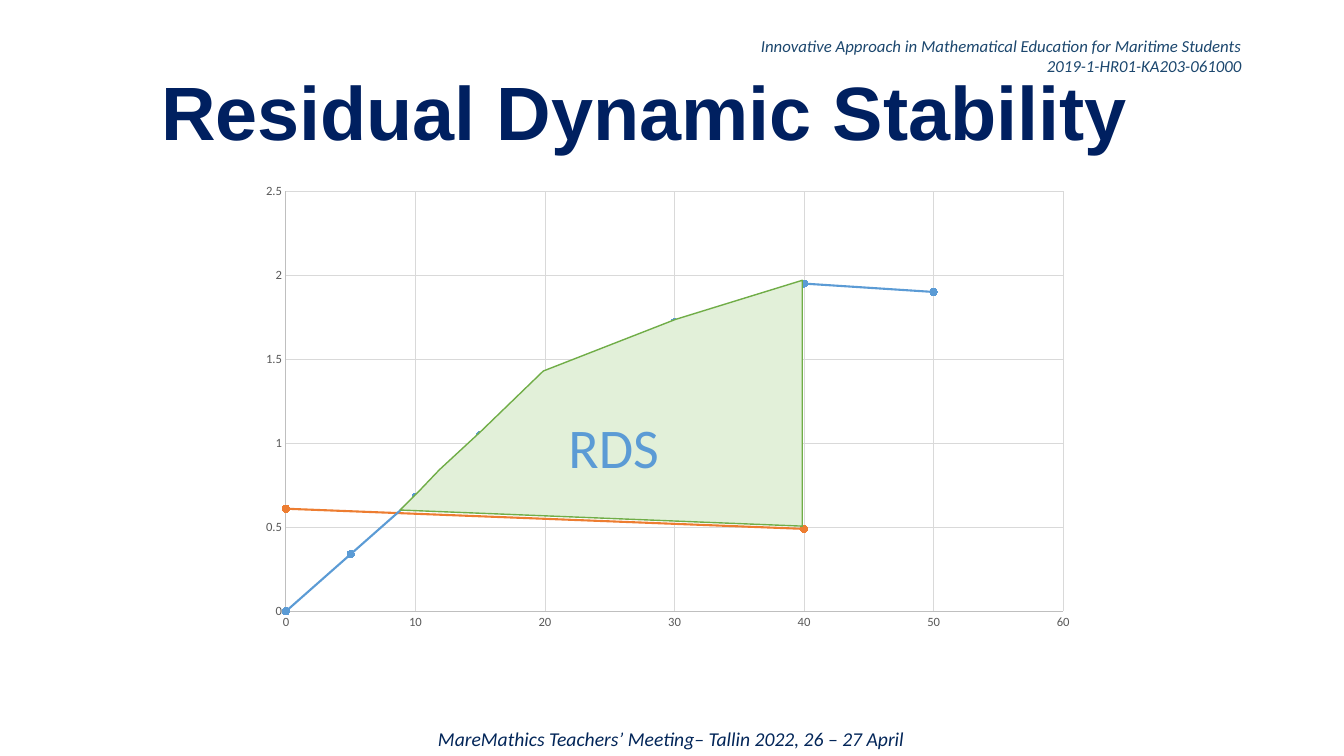
from lxml import etree
from pptx import Presentation
from pptx.chart.data import XyChartData
from pptx.dml.color import RGBColor
from pptx.enum.chart import XL_CHART_TYPE, XL_MARKER_STYLE, XL_TICK_MARK
from pptx.enum.text import MSO_ANCHOR, PP_ALIGN
from pptx.oxml import parse_xml
from pptx.oxml.ns import nsdecls, qn
from pptx.util import Pt

SCATTER = XL_CHART_TYPE.XY_SCATTER_SMOOTH
CIRCLE = XL_MARKER_STYLE.CIRCLE
NO_TICK = XL_TICK_MARK.NONE
TOP, MIDDLE = MSO_ANCHOR.TOP, MSO_ANCHOR.MIDDLE
LEFT, CENTER, RIGHT = PP_ALIGN.LEFT, PP_ALIGN.CENTER, PP_ALIGN.RIGHT

HEADER_BLUE = RGBColor(0x1C, 0x47, 0x6E)
FOOTER_BLUE = RGBColor(0x03, 0x26, 0x59)
TITLE_NAVY = RGBColor(0x00, 0x20, 0x60)
BLUE = RGBColor(0x5B, 0x9B, 0xD5)
ORANGE = RGBColor(0xED, 0x7D, 0x31)
GREEN = RGBColor(0x70, 0xAD, 0x47)
PALE_GREEN = RGBColor(0xE2, 0xF0, 0xD9)
BLACK = RGBColor(0x00, 0x00, 0x00)
LABEL_GREY = RGBColor(0x59, 0x59, 0x59)
AXIS_GREY = RGBColor(0xBF, 0xBF, 0xBF)
GRID_GREY = RGBColor(0xD9, 0xD9, 0xD9)

SERIES = [
    ("Series 1", BLUE, [(0, 0), (5, 0.34), (10, 0.68), (12, 0.82), (15, 1.05),
                        (20, 1.4), (30, 1.72), (40, 1.95), (50, 1.9)]),
    ("Series 2", ORANGE, [(0, 0.61), (40, 0.49)]),
]
RDS_OUTLINE = [(285.8, 364.3), (298.1, 352.1), (313.9, 335.5), (342.7, 308.9),
               (388.1, 265), (482.4, 228.2), (573.1, 200.2), (573.1, 375.8)]
# Plot area as fractions of the chart frame
PLOT = {"x": 0.044, "y": 0.034, "w": 0.93, "h": 0.904}


def set_font(font, size, color, name="Calibri", bold=False, italic=False):
    font.size, font.name = Pt(size), name
    font.bold, font.italic = bold, italic
    font.color.rgb = color


def add_text(shapes, text, box, align=LEFT, anchor=TOP, spacing=None, **font):
    """Add a text box with one paragraph per line of text."""
    tf = shapes.add_textbox(*map(Pt, box)).text_frame
    tf.word_wrap = True
    tf.vertical_anchor = anchor
    for i, line in enumerate(text.split("\n")):
        p = tf.add_paragraph() if i else tf.paragraphs[0]
        p.alignment = align
        p.line_spacing = spacing
        r = p.add_run()
        r.text = line
        set_font(r.font, **font)


def set_line(line, color, width):
    line.color.rgb = color
    line.width = Pt(width)


def format_axis(axis, maximum, step):
    axis.minimum_scale, axis.maximum_scale = 0, maximum
    axis.major_unit = step
    axis.major_tick_mark = axis.minor_tick_mark = NO_TICK
    axis.has_major_gridlines = True
    set_line(axis.major_gridlines.format.line, GRID_GREY, 0.75)
    set_line(axis.format.line, AXIS_GREY, 0.75)
    set_font(axis.tick_labels.font, 9, LABEL_GREY)
    axis.tick_labels.number_format = "General"
    axis.tick_labels.number_format_is_linked = False


def fix_plot_area(chart):
    """Give the inner plot area a fixed place inside the chart frame."""
    plot_area = chart.element.find(".//" + qn("c:plotArea"))
    for old in plot_area.findall(qn("c:layout")):
        plot_area.remove(old)
    layout = parse_xml(f"<c:layout {nsdecls('c')}><c:manualLayout/></c:layout>")
    values = {"layoutTarget": "inner", "xMode": "edge", "yMode": "edge", **PLOT}
    for tag, value in values.items():
        etree.SubElement(layout[0], qn("c:" + tag)).set("val", str(value))
    plot_area.insert(0, layout)


def add_stability_chart(shapes, box):
    data = XyChartData()
    for name, _, points in SERIES:
        series = data.add_series(name)
        for x, y in points:
            series.add_data_point(x, y)
    chart = shapes.add_chart(SCATTER, *map(Pt, box), data).chart
    chart.has_title = chart.has_legend = False
    set_font(chart.font, 10, BLACK)
    format_axis(chart.category_axis, 60, 10)
    format_axis(chart.value_axis, 2.5, 0.5)
    chart.plots[0].vary_by_categories = False
    for series, (_, color, _) in zip(chart.plots[0].series, SERIES):
        series.smooth = True
        set_line(series.format.line, color, 1.5)
        marker = series.marker
        marker.style, marker.size = CIRCLE, 5
        marker.format.fill.solid()
        marker.format.fill.fore_color.rgb = color
        set_line(marker.format.line, color, 0.75)
    fix_plot_area(chart)


def add_area(shapes, points, fill, line):
    start, *rest = [(Pt(x), Pt(y)) for x, y in points]
    builder = shapes.build_freeform(*start)
    builder.add_line_segments(rest, close=True)
    s = builder.convert_to_shape()
    s.shadow.inherit = False
    s.fill.solid()
    s.fill.fore_color.rgb = fill
    set_line(s.line, line, 1)


def main():
    prs = Presentation()
    prs.slide_width, prs.slide_height = Pt(960), Pt(540)
    shapes = prs.slides.add_slide(prs.slide_layouts[6]).shapes

    add_text(shapes, "Innovative Approach in Mathematical Education for Maritime "
             "Students\n2019-1-HR01-KA203-061000", (66, 21.6, 828, 36),
             align=RIGHT, anchor=MIDDLE, size=12, color=HEADER_BLUE, italic=True)
    add_text(shapes, "MareMathics Teachers’ Meeting– Tallin 2022, 26 – 27 April",
             (66, 515.5, 827, 24.5), align=CENTER, size=14, color=FOOTER_BLUE,
             italic=True)
    add_text(shapes, "Residual Dynamic Stability", (108, 54, 756, 58.3),
             anchor=MIDDLE, spacing=0.9, size=54, color=TITLE_NAVY,
             name="Arial", bold=True)
    add_stability_chart(shapes, (178, 125.3, 597, 332))

    rds = shapes.add_group_shape().shapes
    add_area(rds, RDS_OUTLINE, PALE_GREEN, GREEN)
    add_text(rds, "RDS", (399, 291, 124, 55.5), size=40, color=BLUE)

    prs.save("out.pptx")


if __name__ == "__main__":
    main()
